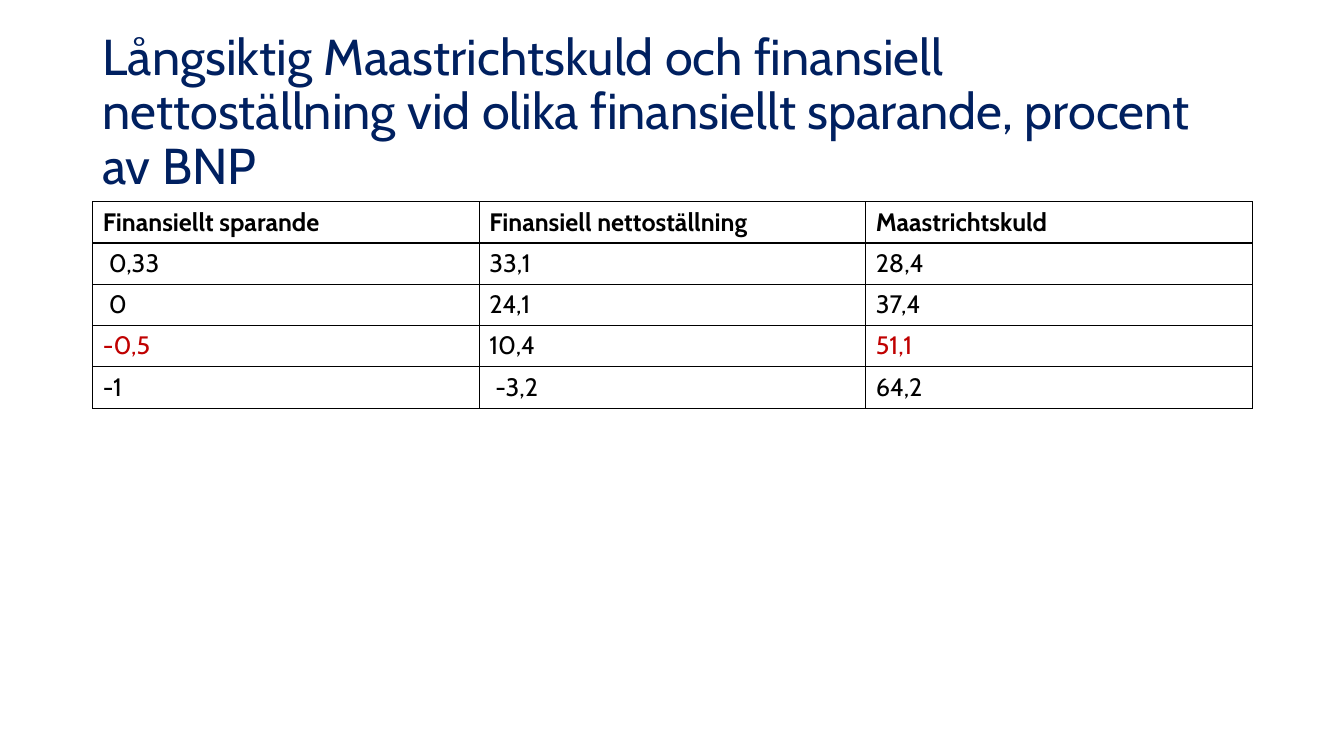
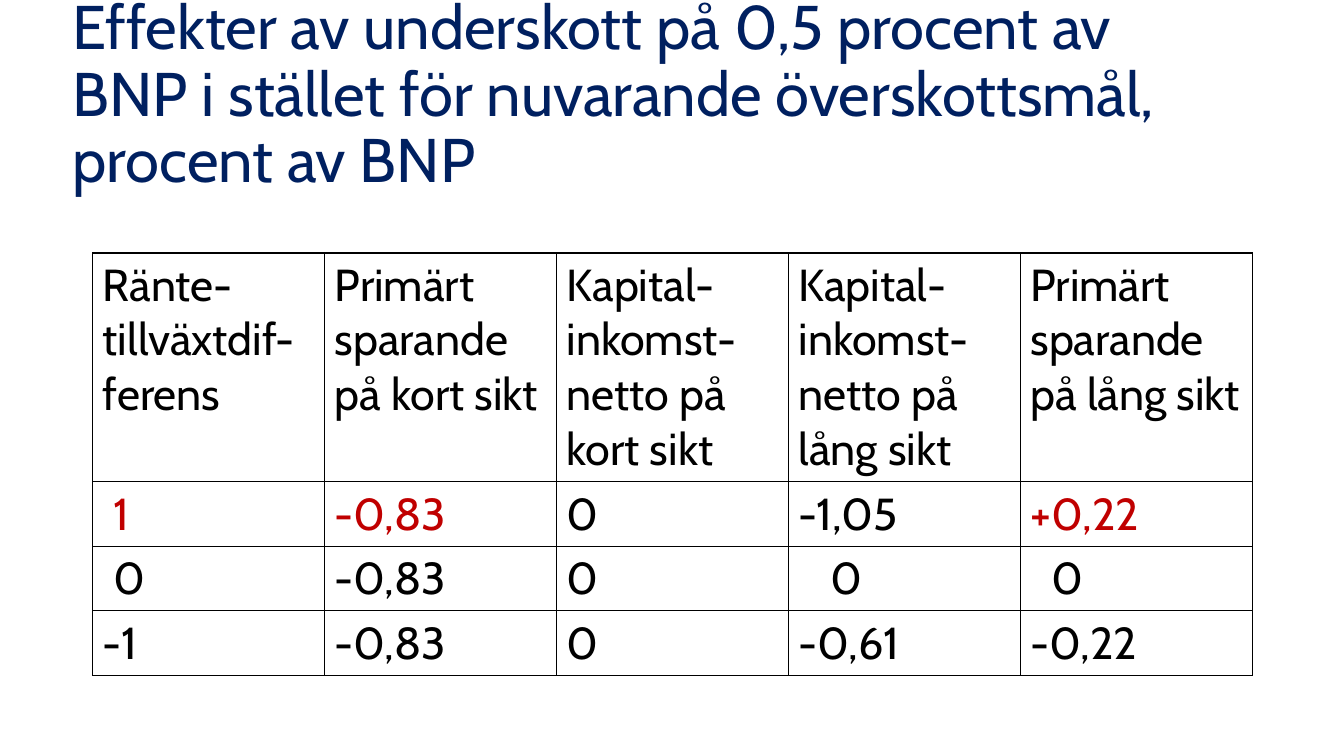
from lxml import etree
from pptx import Presentation
from pptx.dml.color import RGBColor as RGB
from pptx.enum.text import MSO_ANCHOR as Anchor
from pptx.oxml.ns import qn
from pptx.util import Inches, Pt

FONT = "Cabin"
HUES = {"title": "002060", "text": "000000", "mark": "C00000", "back": "FFFFFF"}
WIDTH = 11.5    # shared by titles and tables
LEFT = 0.92
PAD = 0.1       # cell padding, inches
STEP = 0.0033   # one indent step, inches per point of text size


def style(par, size, hue, bold=False):
    for run in par.runs:
        font = run.font
        font.name, font.size, font.bold = FONT, Pt(size), bold
        font.color.rgb = RGB.from_string(HUES[hue])


def border(cell):
    """Draw a thin line on each side of the cell."""
    props = cell._tc.get_or_add_tcPr()
    for i, side in enumerate(("lnL", "lnR", "lnT", "lnB")):
        line = etree.Element(qn("a:" + side), w=str(Pt(1)))
        fill = etree.SubElement(line, qn("a:solidFill"))
        etree.SubElement(fill, qn("a:srgbClr"), val=HUES["text"])
        props.insert(i, line)


def add_title(slide, text, left, top, size):
    box = slide.shapes.add_textbox(
        Inches(left), Inches(top), Inches(WIDTH), Inches(1.45))
    frame = box.text_frame
    frame.word_wrap = True
    frame.vertical_anchor = Anchor.MIDDLE
    frame.text = text
    par = frame.paragraphs[0]
    par.line_spacing = 0.9
    style(par, size, "title")


def add_grid(slide, rows, top, highs, size, marks, shifts, bold=False):
    """Table with equal columns; marks are red cells, shifts are indent steps."""
    count = len(rows[0])
    table = slide.shapes.add_table(
        len(rows), count, Inches(LEFT), Inches(top),
        Inches(WIDTH), Inches(sum(highs))).table
    table.first_row = table.horz_banding = False
    for col in table.columns:
        col.width = Inches(WIDTH / count)
    for r, (row, high) in enumerate(zip(rows, highs)):
        table.rows[r].height = Inches(high)
        for c, text in enumerate(row):
            cell = table.cell(r, c)
            cell.text = text
            cell.fill.background()
            cell.margin_left = Inches(PAD + shifts.get((r, c), 0) * STEP * size)
            hue = "mark" if (r, c) in marks else "text"
            style(cell.text_frame.paragraphs[0], size, hue, bold and r == 0)
            border(cell)


def new_slide(deck):
    slide = deck.slides.add_slide(deck.slide_layouts[6])
    fill = slide.background.fill
    fill.solid()
    fill.fore_color.rgb = RGB.from_string(HUES["back"])
    return slide


def debt_slide(deck):
    slide = new_slide(deck)
    add_title(slide, "Långsiktig Maastrichtskuld och finansiell nettoställning "
              "vid olika finansiellt sparande, procent av BNP", LEFT, 0.4, 36)
    rows = [
        ("Finansiellt sparande", "Finansiell nettoställning", "Maastrichtskuld"),
        ("0,33", "33,1", "28,4"),
        ("0", "24,1", "37,4"),
        ("-0,5", "10,4", "51,1"),
        ("-1", "-3,2", "64,2"),
    ]
    add_grid(slide, rows, 2, [0.41] * 5, 18, marks={(3, 0), (3, 2)},
             shifts={(1, 0): 1, (2, 0): 1, (4, 1): 1}, bold=True)


def effect_slide(deck):
    slide = new_slide(deck)
    add_title(slide, "Effekter av underskott på 0,5 procent av BNP i stället "
              "för nuvarande överskottsmål, procent av BNP", 0.62, 0.23, 44)
    rows = [
        ("Ränte-tillväxtdif-ferens", "Primärt sparande på kort sikt",
         "Kapital-inkomst-netto på kort sikt",
         "Kapital-inkomst-netto på lång sikt", "Primärt sparande på lång sikt"),
        ("1", "-0,83", "0", "-1,05", "+0,22"),
        ("0", "-0,83", "0", "0", "0"),
        ("-1", "-0,83", "0", "-0,61", "-0,22"),
    ]
    add_grid(slide, rows, 2.51, [2.27] + [0.64] * 3, 32,
             marks={(1, 0), (1, 1), (1, 4)},
             shifts={(1, 0): 1, (2, 0): 1, (2, 3): 3, (2, 4): 2})


def main():
    deck = Presentation()
    deck.slide_width, deck.slide_height = Inches(13.33), Inches(7.5)
    debt_slide(deck)
    effect_slide(deck)
    deck.save("out.pptx")


if __name__ == "__main__":
    main()
